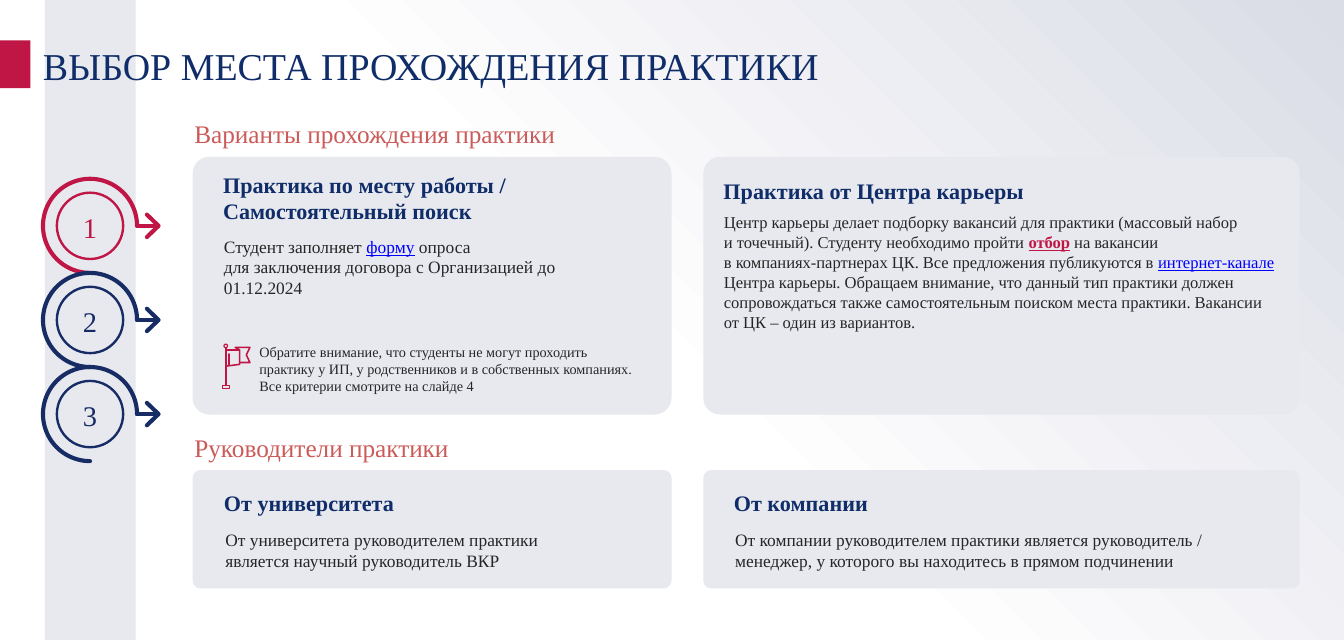
from pptx import Presentation
from pptx.dml.color import RGBColor
from pptx.enum import shapes, text
from pptx.oxml import ns
from pptx.util import Cm, Pt
from lxml import etree

FONT = "Times New Roman"
COLORS = {
    "white": "FFFFFF", "haze": "DADCE6", "card": "E7E9EF", "navy": "172C65",
    "title": "102D69", "crimson": "C01646", "coral": "CB5B59",
    "body": "262626", "link": "0000FF",
}
RGB = {name: RGBColor.from_string(code) for name, code in COLORS.items()}

deck = Presentation()
deck.slide_width, deck.slide_height = Cm(30), Cm(14.28)
slide = deck.slides.add_slide(deck.slide_layouts[6])
tree = slide.shapes

background = slide.background.fill
background.gradient()
background.gradient_angle = 45
for stop, position, color in zip(background.gradient_stops, (0.47, 1), ("white", "haze")):
    stop.position = position
    stop.color.rgb = RGB[color]


def paint(part, fill=None, line=None, width=0.75):
    """Set fill and rounded outline, and take the theme shadow away."""
    if hasattr(part, "fill"):
        part.shadow.inherit = False
        if fill:
            part.fill.solid()
            part.fill.fore_color.rgb = RGB[fill]
        else:
            part.fill.background()
    if line:
        part.line.color.rgb = RGB[line]
        part.line.width = Pt(width)
        part._element.spPr.find(ns.qn("a:ln")).set("cap", "rnd")
    else:
        part.line.fill.background()
    if not hasattr(part, "fill"):
        etree.SubElement(part._element.spPr, ns.qn("a:effectLst"))
    return part


def write(box, paragraphs, size, color, bold=False, padded=False, centred=False):
    """Add text; a paragraph is a list of plain strings and (string, color, bold) links."""
    frame = tree.add_textbox(*map(Cm, box)).text_frame
    frame.word_wrap = True
    frame.margin_left = Cm(0.28 if padded else 0.05)
    frame.margin_right = Cm(0.25 if padded else 0)
    frame.margin_top = Cm(0.13 if padded else 0.01)
    frame.margin_bottom = Cm(0.13 if padded else 0)
    for index, pieces in enumerate(paragraphs):
        paragraph = frame.add_paragraph() if index else frame.paragraphs[0]
        if centred:
            paragraph.alignment = text.PP_ALIGN.CENTER
        font = paragraph.font
        font.name, font.size, font.bold = FONT, Pt(size), bold
        font.color.rgb = RGB[color]
        for piece in pieces:
            run = paragraph.add_run()
            if isinstance(piece, str):
                run.text = piece
            else:
                run.text, link_color, run.font.bold = piece
                run.font.color.rgb = RGB[link_color]
                run.font.underline = True


# Cards
for left, width in ((4.3, 10.69), (15.7, 13.31)):
    for top, height in ((3.5, 5.75), (10.49, 2.64)):
        card = tree.add_shape(shapes.MSO_SHAPE.ROUNDED_RECTANGLE,
                              Cm(left), Cm(top), Cm(width), Cm(height))
        card.adjustments[0] = 0.065
        paint(card, "card")

# Side band and title
band = paint(tree.add_shape(shapes.MSO_SHAPE.RECTANGLE, Cm(1), 0, Cm(2.03), Cm(14.28)), "navy")
band_color = band._element.spPr.find(ns.qn("a:solidFill"))[0]
etree.SubElement(band_color, ns.qn("a:alpha")).set("val", "10000")
paint(tree.add_shape(shapes.MSO_SHAPE.RECTANGLE, 0, Cm(0.9), Cm(0.68), Cm(1.07)), "crimson")
write((0.91, 0.94, 21.23, 0.79), [["ВЫБОР МЕСТА ПРОХОЖДЕНИЯ ПРАКТИКИ"]], 24, "title")

# Numbered steps
STEP_X, STEP_PITCH = 2.01, 2.1
for step, color in enumerate(("crimson", "navy", "navy")):
    y = 5.04 + step * STEP_PITCH
    for kind, radius, weight in ((shapes.MSO_SHAPE.OVAL, 0.74, 1.5),
                                 (shapes.MSO_SHAPE.ARC, 1.05, 2.6)):
        ring = tree.add_shape(kind, Cm(STEP_X - radius), Cm(y - radius),
                              Cm(2 * radius), Cm(2 * radius))
        if kind == shapes.MSO_SHAPE.ARC:
            ring.adjustments[0], ring.adjustments[1] = 54, 0
        paint(ring, line=color, width=weight)
    paint(tree.add_connector(shapes.MSO_CONNECTOR.STRAIGHT,
                             Cm(STEP_X + 1.05), Cm(y), Cm(3.52), Cm(y)), line=color, width=2.6)
    tip = tree.build_freeform(Cm(3.28), Cm(y - 0.25))
    tip.add_line_segments([(Cm(3.54), Cm(y)), (Cm(3.28), Cm(y + 0.25))], close=False)
    paint(tip.convert_to_shape(), line=color, width=2.6)
    write((1.45, y - 0.37, 1.07, 0.86), [[str(step + 1)]], 18, color, centred=True)

# Flag
FLAG_OUTLINES = [
    [(5.04, 7.75), (5.04, 8.59)],
    [(5.05, 7.81), (5.35, 7.81), (5.35, 8.13), (5.05, 8.17)],
    [(5.11, 7.9), (5.11, 8.14)],
    [(5.35, 7.81), (5.25, 7.75), (5.58, 7.75), (5.5, 7.92), (5.58, 8.09), (5.35, 8.09)],
    [(4.97, 8.67), (4.97, 8.6), (5.12, 8.6), (5.12, 8.67), (4.97, 8.67)],
]
for outline in FLAG_OUTLINES:
    points = [(Cm(x), Cm(y)) for x, y in outline]
    stroke = tree.build_freeform(*points[0])
    stroke.add_line_segments(points[1:], close=False)
    paint(stroke.convert_to_shape(), line="crimson", width=1)
paint(tree.add_shape(shapes.MSO_SHAPE.OVAL, Cm(5), Cm(7.68), Cm(0.08), Cm(0.08)),
      line="crimson")

# Section names
for top, section in ((2.62, "Варианты прохождения практики"), (9.63, "Руководители практики")):
    write((4.29, top, 9.91, 0.71), [[section]], 16, "coral")

# Card headings
for left, top, heading in (
    (4.93, 3.81, "Практика по месту работы / Самостоятельный поиск"),
    (16.1, 3.94, "Практика от Центра карьеры"),
    (4.95, 10.92, "От университета"),
    (16.33, 10.92, "От компании"),
):
    write((left, top, 8.97, 1.19), [[heading]], 14, "title", bold=True)

# Card texts
for box, size, paragraphs in (
    ((4.72, 5.13, 8.64, 1.68), 11, [
        ["Студент заполняет ", ("форму", "link", False), " опроса"],
        ["для заключения договора с Организацией до 01.12.2024"],
    ]),
    ((5.51, 7.52, 9.02, 1.42), 9, [
        ["Обратите внимание, что студенты не могут проходить практику у ИП, "
         "у родственников и в собственных компаниях. Все критерии смотрите на слайде 4"],
    ]),
    ((15.88, 4.6, 12.85, 3.4), 10.5, [
        ["Центр карьеры делает подборку вакансий для практики (массовый набор"],
        ["и точечный). Студенту необходимо пройти ", ("отбор", "crimson", True), " на вакансии"],
        ["в компаниях-партнерах ЦК. Все предложения публикуются в ",
         ("интернет-канале ", "link", False),
         "Центра карьеры. Обращаем внимание, что данный тип практики должен сопровождаться "
         "также самостоятельным поиском места практики. Вакансии от ЦК – один из вариантов."],
    ]),
    ((4.75, 11.68, 8.64, 1.19), 11, [
        ["От университета руководителем практики является научный руководитель ВКР"],
    ]),
    ((16.13, 11.68, 12.57, 1.19), 11, [
        ["От компании руководителем практики является руководитель / менеджер, "
         "у которого вы находитесь в прямом подчинении"],
    ]),
):
    write(box, paragraphs, size, "body", padded=True)

deck.save("out.pptx")
